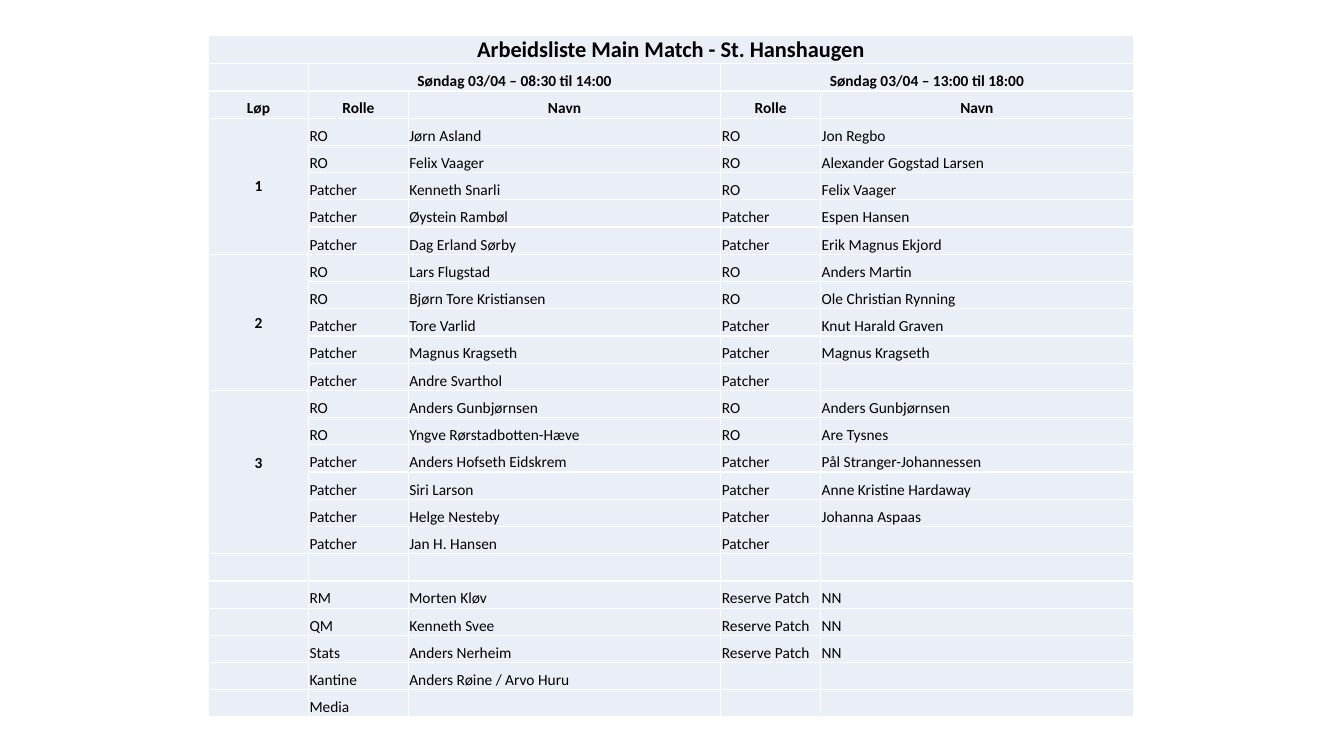
from pptx import Presentation
from pptx.dml.color import RGBColor
from pptx.enum.text import MSO_ANCHOR as Anchor, PP_ALIGN as Align
from pptx.util import Inches, Pt

TITLE = "Arbeidsliste Main Match - St. Hanshaugen"
SHIFTS = ["", "Søndag 03/04 – 08:30 til 14:00", "", "Søndag 03/04 – 13:00 til 18:00", ""]
HEADINGS = ["Løp", "Rolle", "Navn", "Rolle", "Navn"]

# Each course: number, then role and name in the morning and in the afternoon
COURSES = [
    ("1", [
        ("RO", "Jørn Asland", "RO", "Jon Regbo"),
        ("RO", "Felix Vaager", "RO", "Alexander Gogstad Larsen"),
        ("Patcher", "Kenneth Snarli", "RO", "Felix Vaager"),
        ("Patcher", "Øystein Rambøl", "Patcher", "Espen Hansen"),
        ("Patcher", "Dag Erland Sørby", "Patcher", "Erik Magnus Ekjord"),
    ]),
    ("2", [
        ("RO", "Lars Flugstad", "RO", "Anders Martin"),
        ("RO", "Bjørn Tore Kristiansen", "RO", "Ole Christian Rynning"),
        ("Patcher", "Tore Varlid", "Patcher", "Knut Harald Graven"),
        ("Patcher", "Magnus Kragseth", "Patcher", "Magnus Kragseth"),
        ("Patcher", "Andre Svarthol", "Patcher", ""),
    ]),
    ("3", [
        ("RO", "Anders Gunbjørnsen", "RO", "Anders Gunbjørnsen"),
        ("RO", "Yngve Rørstadbotten-Hæve", "RO", "Are Tysnes"),
        ("Patcher", "Anders Hofseth Eidskrem", "Patcher", "Pål Stranger-Johannessen"),
        ("Patcher", "Siri Larson", "Patcher", "Anne Kristine Hardaway"),
        ("Patcher", "Helge Nesteby", "Patcher", "Johanna Aspaas"),
        ("Patcher", "Jan H. Hansen", "Patcher", ""),
    ]),
]
SUPPORT = [
    ("", "", "", ""),
    ("RM", "Morten Kløv", "Reserve Patch", "NN"),
    ("QM", "Kenneth Svee", "Reserve Patch", "NN"),
    ("Stats", "Anders Nerheim", "Reserve Patch", "NN"),
    ("Kantine", "Anders Røine / Arvo Huru", "", ""),
    ("Media", "", "", ""),
]

COLUMN_WIDTHS = [0.99, 0.99, 3.1, 0.99, 3.1]
LEFT, TOP, WIDTH, HEIGHT = 2.07, 0.35, 9.19, 6.76
HEADER_ROWS = 3


def color(hex_string):
    return RGBColor.from_string(hex_string)


def fill_cell(cell, text, size, heading):
    cell.fill.solid()
    cell.fill.fore_color.rgb = color("EAEFF7")
    cell.margin_left = cell.margin_right = cell.margin_top = Inches(0.01)
    cell.margin_bottom = 0
    cell.vertical_anchor = Anchor.BOTTOM
    cell.text_frame.text = text
    paragraph = cell.text_frame.paragraphs[0]
    paragraph.alignment = Align.CENTER if heading else Align.LEFT
    for run in paragraph.runs:
        run.font.name = "Calibri"
        run.font.size = Pt(size)
        run.font.bold = heading
        run.font.color.rgb = color("000000")
    if not text:
        # Keeps an empty cell from growing its row
        paragraph._p.get_or_add_endParaRPr().set("sz", str(size * 100))


def main():
    rows = [[TITLE, "", "", "", ""], SHIFTS, HEADINGS]
    course_spans = []
    for number, crew in COURSES:
        course_spans.append((len(rows), len(rows) + len(crew) - 1))
        rows += [[number if i == 0 else "", *people] for i, people in enumerate(crew)]
    rows += [["", *people] for people in SUPPORT]

    prs = Presentation()
    prs.slide_width, prs.slide_height = Inches(13.33), Inches(7.5)
    slide = prs.slides.add_slide(prs.slide_layouts[6])
    roster = slide.shapes.add_table(
        len(rows), len(COLUMN_WIDTHS),
        Inches(LEFT), Inches(TOP), Inches(WIDTH), Inches(HEIGHT)).table
    roster.first_row = roster.horz_banding = False
    for column, width in zip(roster.columns, COLUMN_WIDTHS):
        column.width = Inches(width)

    for r, row in enumerate(rows):
        roster.rows[r].height = Inches(HEIGHT / len(rows))
        for c, text in enumerate(row):
            fill_cell(roster.cell(r, c), text, 16 if r == 0 and text else 11,
                      r < HEADER_ROWS or c == 0)

    roster.cell(0, 0).merge(roster.cell(0, 4))
    for c in (1, 3):
        roster.cell(1, c).merge(roster.cell(1, c + 1))
    for first, last in course_spans:
        course = roster.cell(first, 0)
        course.merge(roster.cell(last, 0))
        course.vertical_anchor = Anchor.MIDDLE
    # The last course number sits half a line above the middle
    course.margin_bottom = Inches(0.18)

    prs.save("out.pptx")


if __name__ == "__main__":
    main()
